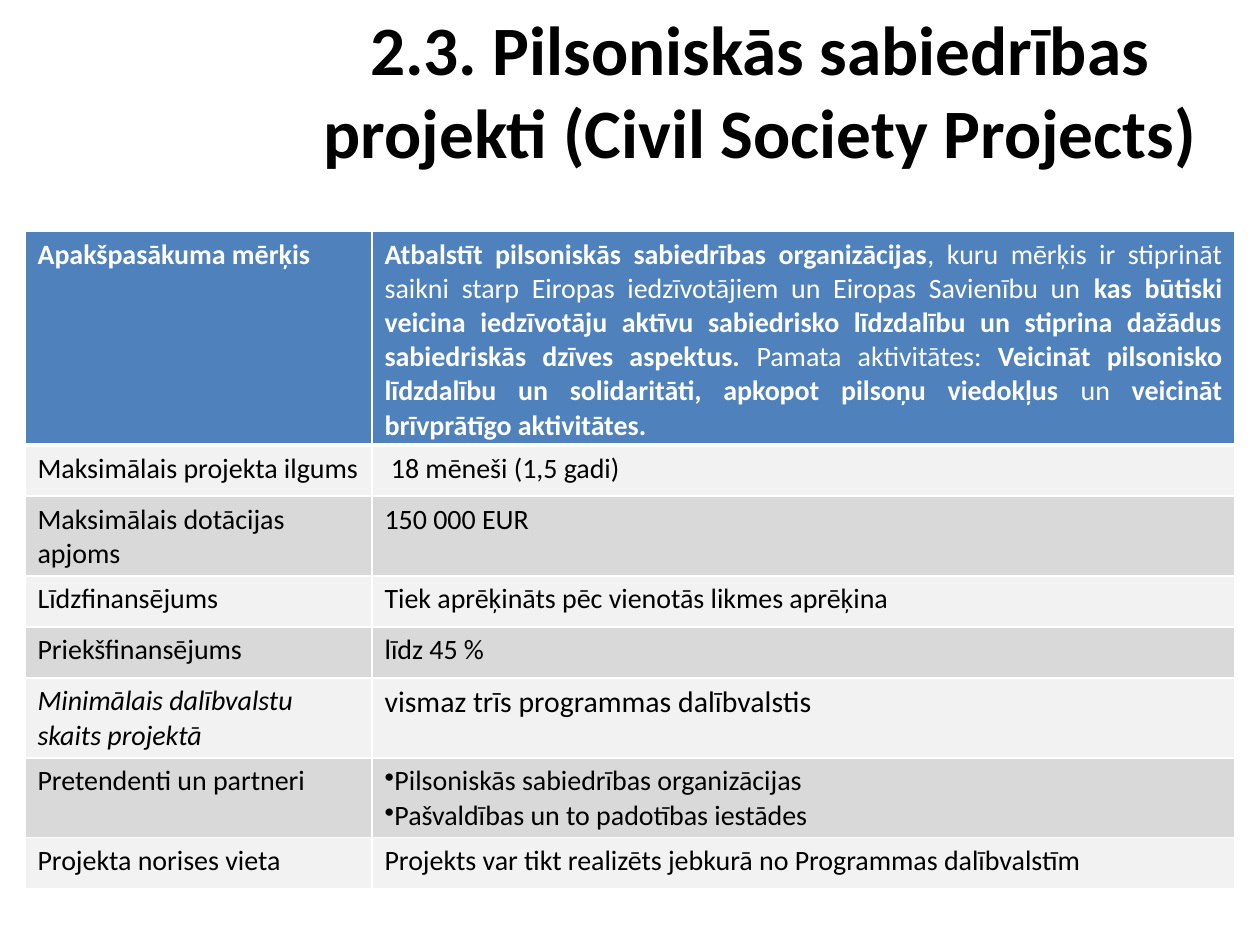
from typing import NamedTuple

from lxml import etree
from pptx import Presentation
from pptx.dml.color import RGBColor
from pptx.enum.text import MSO_ANCHOR, PP_ALIGN
from pptx.oxml.ns import qn
from pptx.util import Pt

PX = 914400 / 126
TOP = MSO_ANCHOR.TOP
LEFT, MID, JUST = PP_ALIGN.LEFT, PP_ALIGN.CENTER, PP_ALIGN.JUSTIFY
FACE = "Calibri"
HEX = {"ink": "000000", "white": "FFFFFF", "head": "4F81BD", "light": "F2F2F2", "dark": "D9D9D9"}


class Run(NamedTuple):
    text: str
    bold: bool = False


class Para(NamedTuple):
    runs: list[Run]
    size: float = 16
    color: str = "ink"
    italic: bool = False
    align: PP_ALIGN = LEFT
    bullet: bool = False


class Row(NamedTuple):
    label: Para
    body: list[Para]


def emu(px: int) -> int:
    """Turn pixels into EMU."""
    return round(px * PX)


def plain(text: str, **look) -> Para:
    """Make a paragraph of one regular run."""
    return Para([Run(text)], **look)


def write(frame, paras: list[Para]) -> None:
    """Fill a text frame with paragraphs."""
    for i, para in enumerate(paras):
        line = frame.add_paragraph() if i else frame.paragraphs[0]
        line.alignment = para.align
        if para.bullet:
            etree.SubElement(line._p.get_or_add_pPr(), qn("a:buChar"), char="•")
        font = line.font
        font.name, font.size, font.italic = FACE, Pt(para.size), para.italic
        font.color.rgb = RGBColor.from_string(HEX[para.color])
        bolds = {part.bold for part in para.runs}
        if len(bolds) == 1:
            font.bold = bolds.pop()
        for part in para.runs:
            run = line.add_run()
            run.text = part.text
            if font.bold is None:
                run.font.bold = part.bold


def edge(cell, side: str, width: float) -> None:
    """Draw one white border of a cell."""
    line = etree.Element(qn(f"a:{side}"), w=str(Pt(width)))
    fill = etree.SubElement(line, qn("a:solidFill"))
    etree.SubElement(fill, qn("a:srgbClr"), val=HEX["white"])
    cell._tc.get_or_add_tcPr().append(line)


def paint(cell, paras: list[Para], row: int) -> None:
    """Write, frame and fill one cell."""
    write(cell.text_frame, paras)
    edge(cell, "lnL", 1)
    edge(cell, "lnR", 1)
    edge(cell, "lnT", 3 if row == 1 else 1)
    edge(cell, "lnB", 3 if row == 0 else 1)
    tone = "head" if row == 0 else "light" if row % 2 else "dark"
    cell.fill.solid()
    cell.fill.fore_color.rgb = RGBColor.from_string(HEX[tone])


TITLE = Para([Run("2.3. Pilsoniskās sabiedrības projekti (Civil Society Projects)", True)], 39.6, align=MID)
GOAL = Para([
    Run("Atbalstīt pilsoniskās sabiedrības organizācijas", True),
    Run(", kuru mērķis ir stiprināt saikni starp Eiropas iedzīvotājiem un Eiropas Savienību un "),
    Run("kas būtiski veicina iedzīvotāju aktīvu sabiedrisko līdzdalību un stiprina "
        "dažādus sabiedriskās dzīves aspektus. ", True),
    Run("Pamata aktivitātes: "),
    Run("Veicināt pilsonisko līdzdalību un solidaritāti, apkopot pilsoņu viedokļus ", True),
    Run("un"),
    Run(" veicināt brīvprātīgo aktivitātes.", True),
], color="white", align=JUST)
ROWS = [
    Row(Para([Run("Apakšpasākuma mērķis", True)], color="white"), [GOAL]),
    Row(plain("Maksimālais projekta ilgums"), [plain(" 18 mēneši (1,5 gadi)")]),
    Row(plain("Maksimālais dotācijas apjoms"), [plain("150 000 EUR")]),
    Row(plain("Līdzfinansējums"), [plain("Tiek aprēķināts pēc vienotās likmes aprēķina")]),
    Row(plain("Priekšfinansējums"), [plain("līdz 45 %")]),
    Row(plain("Minimālais dalībvalstu skaits projektā", italic=True),
        [plain("vismaz trīs programmas dalībvalstis", size=17)]),
    Row(plain("Pretendenti un partneri"),
        [plain("Pilsoniskās sabiedrības organizācijas", bullet=True),
         plain("Pašvaldības un to padotības iestādes", bullet=True)]),
    Row(plain("Projekta norises vieta"),
        [plain("Projekts var tikt realizēts jebkurā no Programmas dalībvalstīm")]),
]
COLS = [347, 863]
HIGH = 51


def main() -> None:
    """Build the slide and save it."""
    deck = Presentation()
    deck.slide_width, deck.slide_height = emu(1260), emu(945)
    slide = deck.slides.add_slide(deck.slide_layouts[6])

    frame = slide.shapes.add_textbox(emu(260), 0, emu(1000), emu(142)).text_frame
    frame.word_wrap = True
    frame.vertical_anchor = TOP
    write(frame, [TITLE])

    shape = slide.shapes.add_table(
        len(ROWS), len(COLS), emu(25), emu(231), emu(sum(COLS)), emu(HIGH * len(ROWS)))
    table = shape.table
    table.horz_banding = False
    for col, wide in zip(table.columns, COLS):
        col.width = emu(wide)
    for i, row in enumerate(ROWS):
        table.rows[i].height = emu(HIGH)
        paint(table.cell(i, 0), [row.label], i)
        paint(table.cell(i, 1), row.body, i)

    deck.save("out.pptx")


if __name__ == "__main__":
    main()
